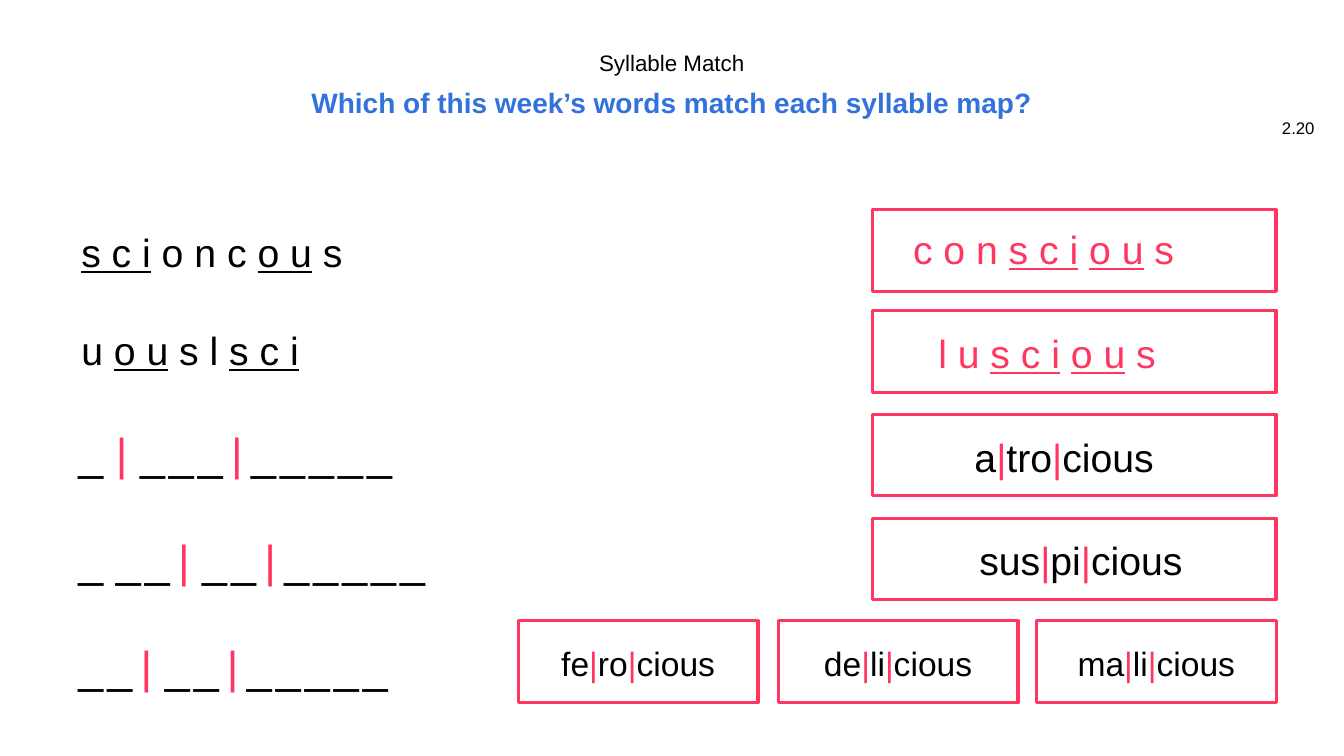
from pptx import Presentation
from pptx.dml.color import RGBColor
from pptx.enum import shapes, text
from pptx.util import Pt

COLOURS = {"black": "000000", "blue": "3372DC", "pink": "FF3760"}
FONT = "Arial"
LEFT, CENTRE, RIGHT = text.PP_ALIGN.LEFT, text.PP_ALIGN.CENTER, text.PP_ALIGN.RIGHT
TOP, MIDDLE = text.MSO_ANCHOR.TOP, text.MSO_ANCHOR.MIDDLE


def add_text(slide, box, wording, size, colour="black", align=LEFT,
             anchor=TOP, bold=False, tracking=0):
    """Runs are split by "/"; "*" underlines a run and "~" leaves it untracked."""
    shape = slide.shapes.add_textbox(*map(Pt, box))
    frame = shape.text_frame
    frame.word_wrap = True
    frame.vertical_anchor = anchor
    paragraph = frame.paragraphs[0]
    paragraph.alignment = align
    for part in wording.split("/"):
        run = paragraph.add_run()
        run.text = part.lstrip("*~")
        run.font.name = FONT
        run.font.size = Pt(size)
        run.font.bold = bold
        tint = "pink" if run.text.startswith("|") else colour
        run.font.color.rgb = RGBColor.from_string(COLOURS[tint])
        if part.startswith("*"):
            run.font.underline = True
        if tracking and not part.startswith("~"):
            run.font._element.set("spc", str(tracking * 100))
    return paragraph


def add_header(slide, left, top, width):
    label = add_text(slide, (left, top, width, 25), "Syllable Match", 16, align=CENTRE)
    question = add_text(slide, (left, top + 26, width, 29),
                        "Which of this week’s words match each syllable map?",
                        20, "blue", CENTRE, MIDDLE, bold=True)
    for paragraph in (label, question):
        paragraph.line_spacing = 0.9
    add_text(slide, (900.7, top + 43.2, 45.4, 28.8), "2.20", 12,
             align=RIGHT, anchor=MIDDLE)


def add_prompts(slide, left, width):
    # Scrambled words
    for top, letters in ((159.8, "*s c i/ o n c /*o u/ s"),
                         (229.7, "u /*o u/ s l /*s c i")):
        add_text(slide, (left + 2, top, width, 41), letters, 28)
    # Syllable maps
    for top, syllables in ((300.2, "~_ /~| /_ _ _ /| /_ _ _ _ _"),
                           (377.3, "~_ /_ _ /~| /_ _ /| /_ _ _ _ _"),
                           (452.9, "_ _ /~| /_ _ /| /_ _ _ _ _")):
        add_text(slide, (left, top, width, 46), syllables, 32, tracking=-3)


def add_card(slide, box, wording, size, inset, drop, colour="black", align=LEFT):
    left, top, width, height = box
    card = slide.shapes.add_shape(shapes.MSO_SHAPE.RECTANGLE, *map(Pt, box))
    card.shadow.inherit = False
    card.fill.background()
    card.line.color.rgb = RGBColor.from_string(COLOURS["pink"])
    card.line.width = Pt(2.25)
    text_width = width - 2 * inset if align == CENTRE else width - inset
    add_text(slide, (left + inset, top + drop, text_width, 41),
             wording, size, colour, align)


def add_answers(slide, left, width, height):
    # One answer per row: top, wording, inset, drop, colour
    rows = ((149.8, "c o n /*s c i/ /*o u/ s", 21.6, 7.9, "pink"),
            (221.8, "l u /*s c i/ /*o u/ s", 39.6, 10.1, "pink"),
            (295.9, "a/|/tro/|/cious", 65.5, 10.1, "black"),
            (370.1, "sus/|/pi/|/cious", 69, 9.4, "black"))
    for top, wording, inset, drop, colour in rows:
        add_card(slide, (left, top, width, height), wording, 28, inset, drop, colour)
    # Three answers share the last map
    for start, wording in ((370.1, "fe/|/ro/|/cious"),
                           (555.8, "de/|/li/|/cious"),
                           (740.2, "ma/|/li/|/cious")):
        add_card(slide, (start, 443.5, 171.4, height), wording, 24, -7, 12.2,
                 align=CENTRE)


def main():
    presentation = Presentation()
    presentation.slide_width, presentation.slide_height = Pt(960), Pt(540)
    slide = presentation.slides.add_slide(presentation.slide_layouts[6])
    add_header(slide, 174.2, 33.8, 611.3)
    add_prompts(slide, 49, 324)
    add_answers(slide, 623.5, 288, 58.3)
    presentation.save("out.pptx")


if __name__ == "__main__":
    main()
